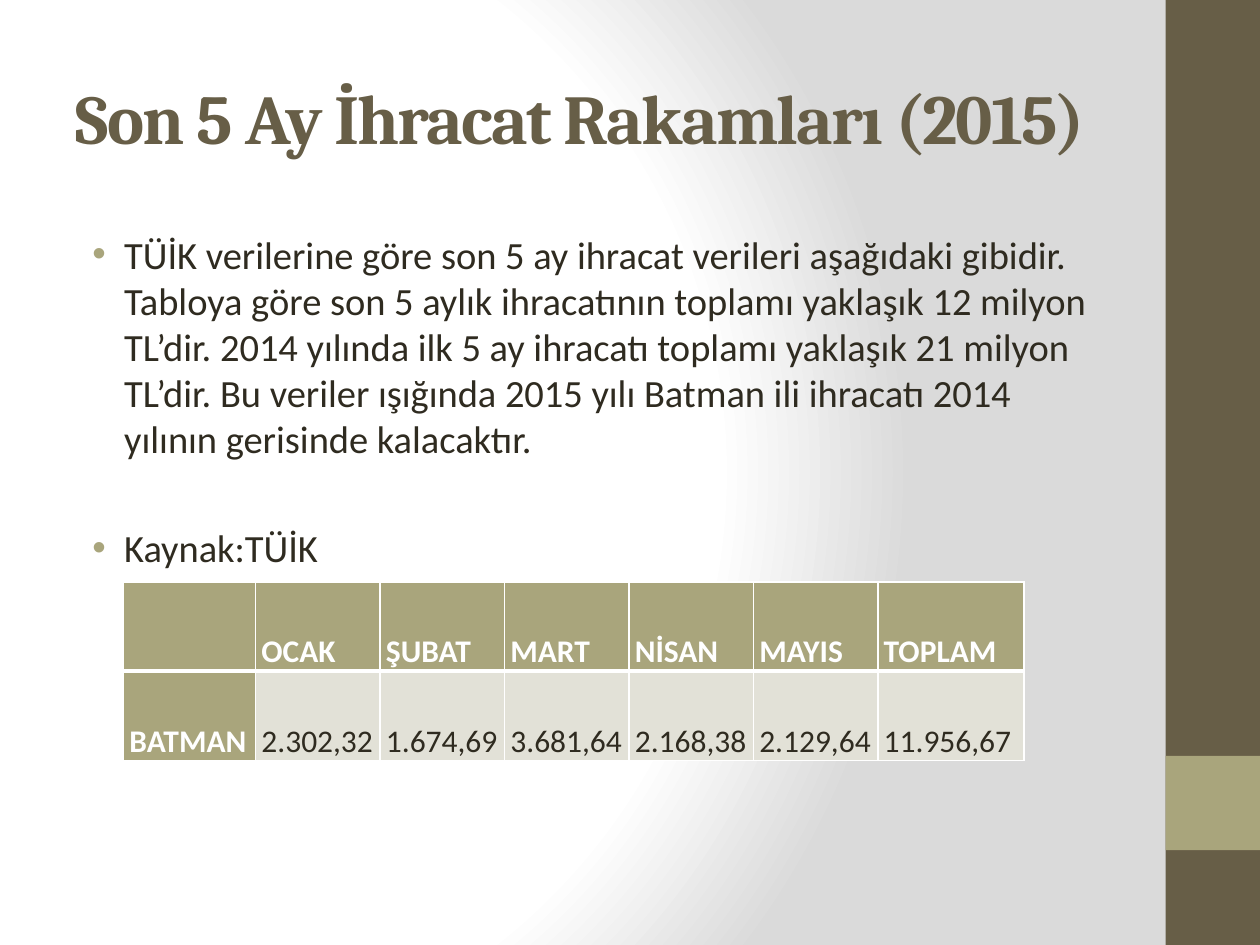
from dataclasses import dataclass

from lxml.etree import SubElement
from pptx import Presentation
from pptx.dml.color import RGBColor
from pptx.enum.shapes import MSO_SHAPE
from pptx.enum.text import MSO_ANCHOR, MSO_AUTO_SIZE, PP_ALIGN
from pptx.oxml import parse_xml
from pptx.oxml.ns import nsdecls, qn
from pptx.util import Cm, Pt

BROWN, OLIVE, PALE, INK, WHITE = "675E47", "A9A57C", "E2E1D7", "2F2B20", "FFFFFF"
BODY = (
    "TÜİK verilerine göre son 5 ay ihracat verileri aşağıdaki gibidir. "
    "Tabloya göre son 5 aylık ihracatının toplamı yaklaşık 12 milyon TL’dir. "
    "2014 yılında ilk 5 ay ihracatı toplamı yaklaşık 21 milyon TL’dir. "
    "Bu veriler ışığında 2015 yılı Batman ili ihracatı 2014 yılının gerisinde kalacaktır.",
    "Kaynak:TÜİK",
)
GAPS = (4.4, 35.7)
ROWS = (
    ("", "OCAK", "ŞUBAT", "MART", "NİSAN", "MAYIS", "TOPLAM"),
    ("BATMAN", "2.302,32", "1.674,69", "3.681,64", "2.168,38", "2.129,64", "11.956,67"),
)
WIDTHS = (2.66, *[2.51] * 5, 2.95)
HEIGHT = 1.8


@dataclass
class Box:
    left: float
    top: float
    width: float
    height: float

    def size(self) -> tuple:
        return Cm(self.left), Cm(self.top), Cm(self.width), Cm(self.height)


@dataclass
class Bar:
    box: Box
    fill: str


BARS = (
    Bar(Box(23.5, 0, 1.9, 19.05), BROWN),
    Bar(Box(23.5, 15.24, 1.9, 1.9), OLIVE),
)


def color(code: str) -> RGBColor:
    return RGBColor.from_string(code)


def style(para, font: str, size: float, code: str, bold: bool = False) -> None:
    for run in para.runs:
        run.font.name = font
        run.font.size = Pt(size)
        run.font.bold = bold
        run.font.color.rgb = color(code)


def place(shape, box: Box) -> None:
    shape.left, shape.top, shape.width, shape.height = box.size()
    shape.text_frame.auto_size = MSO_AUTO_SIZE.NONE
    shape.text_frame.word_wrap = True


def paint(slide) -> None:
    """Give the slide its round grey gradient."""
    slide.background.fill.gradient()
    old = next(slide.element.iter(qn("a:gradFill")))
    stops = "".join(
        f'<a:gs pos="{pos}000"><a:srgbClr val="{code}"/></a:gs>'
        for pos, code in ((0, WHITE), (75, WHITE), (100, "DADADA"))
    )
    new = parse_xml(
        f'<a:gradFill rotWithShape="1" {nsdecls("a")}><a:gsLst>{stops}</a:gsLst>'
        '<a:path path="circle"><a:fillToRect l="20000" t="50000" r="100000" b="50000"/>'
        "</a:path></a:gradFill>"
    )
    old.getparent().replace(old, new)


def draw_bar(slide, bar: Bar) -> None:
    shape = slide.shapes.add_shape(MSO_SHAPE.RECTANGLE, *bar.box.size())
    shape.shadow.inherit = False
    shape.fill.solid()
    shape.fill.fore_color.rgb = color(bar.fill)
    shape.line.fill.background()


def draw_title(slide) -> None:
    title = slide.shapes.title
    place(title, Box(1.27, 0.76, 21.16, 3.18))
    title.text_frame.vertical_anchor = MSO_ANCHOR.MIDDLE
    title.text_frame.text = "Son 5 Ay İhracat Rakamları (2015)"
    para = title.text_frame.paragraphs[0]
    para.alignment = PP_ALIGN.LEFT
    style(para, "Cambria", 40, BROWN, True)
    para.runs[0].font._element.set("spc", "-100")


def bullet(para) -> None:
    props = para._p.get_or_add_pPr()
    props.set("marL", str(Cm(0.95)))
    props.set("indent", str(Cm(-0.64)))
    SubElement(SubElement(props, qn("a:buClr")), qn("a:srgbClr")).set("val", OLIVE)
    SubElement(props, qn("a:buFont")).set("typeface", "Arial")
    SubElement(props, qn("a:buChar")).set("char", "•")


def draw_body(slide) -> None:
    body = slide.placeholders[1]
    place(body, Box(1.3, 4.52, 21.16, 13.34))
    body.text_frame.text = "\n".join(BODY)
    for para, gap in zip(body.text_frame.paragraphs, GAPS):
        para.space_before = Pt(gap)
        bullet(para)
        style(para, "Calibri", 22, INK)


def edge(cell, side: str, width: float) -> None:
    line = SubElement(cell._tc.get_or_add_tcPr(), qn(f"a:ln{side}"), w=str(Pt(width)))
    fill = SubElement(line, qn("a:solidFill"))
    SubElement(fill, qn("a:srgbClr")).set("val", WHITE)


def draw_cell(cell, text: str, head: bool, top: float, base: float) -> None:
    for side, width in (("L", 1), ("R", 1), ("T", top), ("B", base)):
        edge(cell, side, width)
    cell.fill.solid()
    cell.fill.fore_color.rgb = color(OLIVE if head else PALE)
    cell.margin_left = cell.margin_right = Cm(0.12)
    cell.margin_top = cell.margin_bottom = 0
    cell.vertical_anchor = MSO_ANCHOR.BOTTOM
    if text:
        cell.text_frame.text = text
        para = cell.text_frame.paragraphs[0]
        para.line_spacing = 1.15
        style(para, "Calibri", 18, WHITE if head else INK, head)


def draw_table(slide) -> None:
    box = Box(2.49, 11.73, sum(WIDTHS), HEIGHT * len(ROWS))
    table = slide.shapes.add_table(len(ROWS), len(WIDTHS), *box.size()).table
    for col, width in zip(table.columns, WIDTHS):
        col.width = Cm(width)
    for r, row in enumerate(ROWS):
        top, base = (1, 3) if r == 0 else (3, 1)
        for c, text in enumerate(row):
            draw_cell(table.cell(r, c), text, r == 0 or c == 0, top, base)


def main() -> None:
    deck = Presentation()
    deck.slide_width, deck.slide_height = Cm(25.4), Cm(19.05)
    slide = deck.slides.add_slide(deck.slide_layouts[1])
    paint(slide)
    for bar in BARS:
        draw_bar(slide, bar)
    draw_title(slide)
    draw_body(slide)
    draw_table(slide)
    deck.save("out.pptx")


if __name__ == "__main__":
    main()
